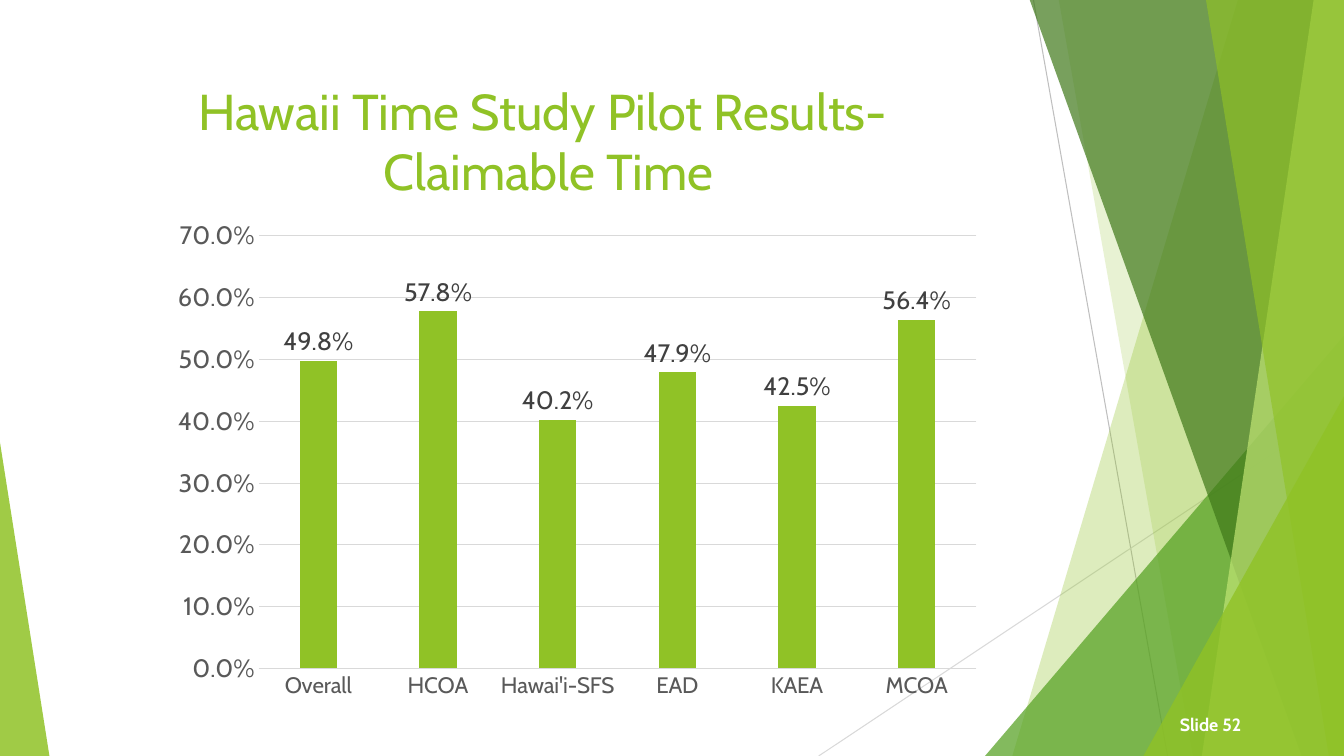
import pptx
import pptx.chart.data
import pptx.dml.color
import pptx.enum.chart
import pptx.enum.shapes
import pptx.enum.text
import pptx.oxml.ns
import pptx.util
from dataclasses import dataclass
from lxml import etree
from pptx.util import Inches


@dataclass(frozen=True)
class Theme:
    """Colours, font and type sizes of the slide."""
    font: str = "Cabin"
    lime: str = "90C226"
    pale: str = "C0E474"
    green: str = "54A021"
    forest: str = "3F7819"
    white: str = "FFFFFF"
    rule: str = "BFBFBF"
    grid: str = "D9D9D9"
    axis_text: str = "595959"
    label_text: str = "404040"
    title_size: float = 36
    value_size: float = 18
    category_size: float = 16
    number_size: float = 12.7


T = Theme()
W, H, TOP = 13.33, 7.5, -0.01
RESULTS = {"Overall": 0.498, "HCOA": 0.578, "Hawai'i-SFS": 0.402,
           "EAD": 0.479, "KAEA": 0.425, "MCOA": 0.564}


def rgb(color):
    """Turn a hex string into a colour."""
    return pptx.dml.color.RGBColor.from_string(color)


def style_font(font, size, color, bold=False):
    """Set the face, size, colour and weight of a font."""
    font.name, font.size, font.bold = T.font, pptx.util.Pt(size), bold
    font.color.rgb = rgb(color)


def style_line(line, color):
    """Give a line its colour and the common hairline width."""
    line.color.rgb = rgb(color)
    line.width = pptx.util.Pt(0.75)


def write_text(shape, text, size, color, align, anchor, bold=False):
    """Fill a shape with one formatted paragraph."""
    tf = shape.text_frame
    tf.word_wrap = True
    tf.vertical_anchor = anchor
    p = tf.paragraphs[0]
    p.text = text
    p.alignment = align
    for r in p.runs:
        style_font(r.font, size, color, bold)


def add_rule(s, start, end, color):
    """Draw a thin straight line."""
    line = s.shapes.add_connector(pptx.enum.shapes.MSO_CONNECTOR.STRAIGHT,
                                  *map(Inches, start + end))
    style_line(line.line, color)
    etree.SubElement(line._element.spPr, pptx.oxml.ns.qn("a:effectLst"))


def paint(shape, color, opacity):
    """Fill a shape with a see-through colour and no outline."""
    shape.shadow.inherit = False
    shape.line.fill.background()
    shape.fill.solid()
    shape.fill.fore_color.rgb = rgb(color)
    clr = shape._element.spPr.find(".//" + pptx.oxml.ns.qn("a:srgbClr"))
    etree.SubElement(clr, pptx.oxml.ns.qn("a:alpha"), val=str(opacity * 1000))


def add_band(s, top_x, bottom_x, color, opacity):
    """Draw a slanted band that reaches the right edge of the slide."""
    points = [(Inches(x), Inches(y)) for x, y in
              ((top_x, TOP), (W, TOP), (W, H), (bottom_x, H))]
    builder = s.shapes.build_freeform(*points[0])
    builder.add_line_segments(points[1:], close=True)
    paint(builder.convert_to_shape(), color, opacity)


def add_corner(s, left, width, height, apex, color, opacity):
    """Draw a right-angled triangle that stands on the bottom edge."""
    sp = s.shapes.add_shape(pptx.enum.shapes.MSO_SHAPE.ISOSCELES_TRIANGLE,
                            *map(Inches, (left, H - height, width, height)))
    sp.adjustments[0] = apex
    paint(sp, color, opacity)


def add_backdrop(s):
    """Draw the lines and green facets behind the content."""
    add_rule(s, (10.25, 0), (11.58, H), T.rule)
    add_rule(s, (W, 4.03), (8.12, H), T.grid)
    add_band(s, 12.28, 10.04, T.lime, 30)
    add_band(s, 10.5, 11.83, T.lime, 20)
    add_corner(s, 9.77, 3.56, 4.17, 1, T.green, 72)
    add_band(s, 10.21, 12.91, T.forest, 70)
    add_band(s, 13.03, 11.92, T.pale, 70)
    add_band(s, 11.96, 13.18, T.lime, 65)
    add_corner(s, 11.34, 1.99, 3.57, 1, T.lime, 80)
    add_corner(s, 0, 0.49, 3.11, 0, T.lime, 85)


def style_axis(axis, size):
    """Remove tick marks and set the label font of an axis."""
    axis.major_tick_mark = pptx.enum.chart.XL_TICK_MARK.NONE
    axis.minor_tick_mark = pptx.enum.chart.XL_TICK_MARK.NONE
    style_font(axis.tick_labels.font, size, T.axis_text)


def add_results_chart(s):
    """Add the column chart of claimable time."""
    data = pptx.chart.data.CategoryChartData(number_format="0.0%")
    data.categories = list(RESULTS)
    data.add_series("Series 1", list(RESULTS.values()))
    chart = s.shapes.add_chart(pptx.enum.chart.XL_CHART_TYPE.COLUMN_CLUSTERED,
                               *map(Inches, (1.6, 2.09, 8.25, 4.94)), data).chart
    chart.has_title = chart.has_legend = False
    style_font(chart.font, T.value_size, T.axis_text)

    style_axis(chart.category_axis, T.category_size)
    style_line(chart.category_axis.format.line, T.grid)
    values = chart.value_axis
    style_axis(values, T.value_size)
    values.minimum_scale, values.maximum_scale, values.major_unit = 0, 0.7, 0.1
    values.format.line.fill.background()
    style_line(values.major_gridlines.format.line, T.grid)
    values.tick_labels.number_format = "0.0%"
    values.tick_labels.number_format_is_linked = False

    plot = chart.plots[0]
    plot.vary_by_categories = False
    plot.gap_width, plot.overlap = 219, -27
    fill = plot.series[0].format.fill
    fill.solid()
    fill.fore_color.rgb = rgb(T.lime)
    plot.has_data_labels = True
    labels = plot.data_labels
    labels.show_value = True
    labels.position = pptx.enum.chart.XL_LABEL_POSITION.OUTSIDE_END
    labels.number_format = "0.0%"
    labels.number_format_is_linked = False
    style_font(labels.font, T.value_size, T.label_text)


def main():
    """Build the slide and save it."""
    prs = pptx.Presentation()
    prs.slide_width, prs.slide_height = Inches(W), Inches(H)
    s = prs.slides.add_slide(prs.slide_layouts[5])
    align, anchor = pptx.enum.text.PP_ALIGN, pptx.enum.text.MSO_ANCHOR
    add_backdrop(s)

    title = s.shapes.title
    title.left, title.top, title.width, title.height = map(
        Inches, (0.74, 0.67, 9.4, 1.44))
    write_text(title, "Hawaii Time Study Pilot Results- \vClaimable Time",
               T.title_size, T.lime, align.CENTER, anchor.MIDDLE)

    number = s.shapes.add_textbox(*map(Inches, (10.49, 7.03, 1.92, 0.31)))
    write_text(number, "Slide 52", T.number_size, T.white, align.RIGHT,
               anchor.MIDDLE, bold=True)
    add_results_chart(s)
    prs.save("out.pptx")


if __name__ == "__main__":
    main()
